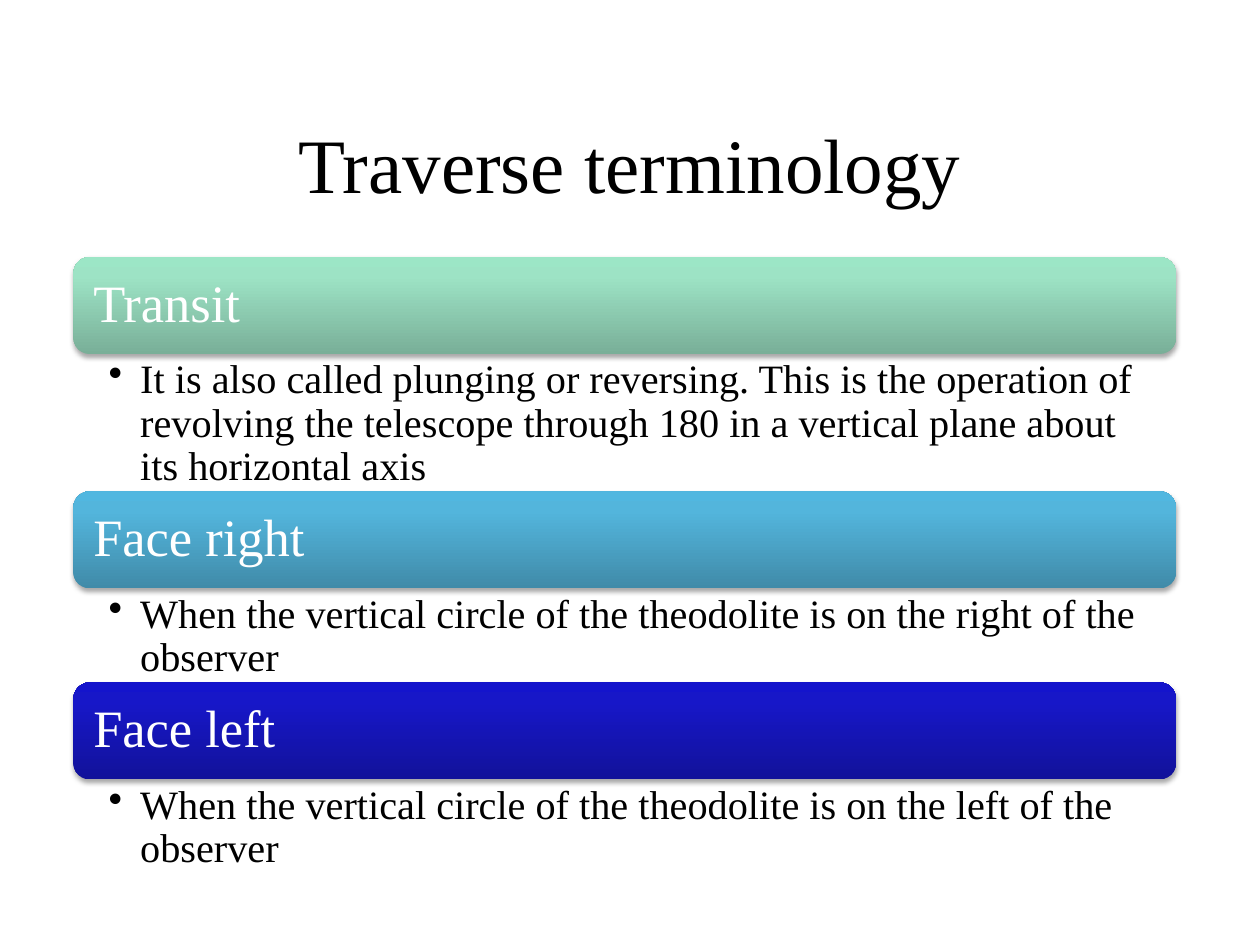
import dataclasses

import pptx
import pptx.dml.color
import pptx.enum.shapes
import pptx.enum.text
import pptx.oxml
import pptx.oxml.ns
import pptx.util

ANCHOR = pptx.enum.text.MSO_ANCHOR
ALIGN = pptx.enum.text.PP_ALIGN


@dataclasses.dataclass(frozen=True)
class Theme:
    """Hold the colours, type sizes and font of the slide."""
    font: str = "Times New Roman"
    title_size: int = 44
    term_size: int = 30
    meaning_size: int = 23
    ink: str = "000000"
    paper: str = "FFFFFF"
    green: tuple = ("79AF98", "9DE3C5", "9CE6C6")
    sky: tuple = ("408BA9", "53B5DC", "51B7E0")
    navy: tuple = ("12129A", "1717C8", "1414CC")


THEME = Theme()
WIDTH, HEIGHT = pptx.util.Inches(10), pptx.util.Inches(7.5)
LEFT, SPAN = 5.83, 87.5
FIRST_ROW, BANNER_ROWS = 27.2, 10.27
TERM_COLUMN_INSET, TERM_ROW_INSET = 0.37, 0.5

TERMS = [
    ("Transit", "It is also called plunging or reversing. This is the operation of revolving "
     "the telescope through 180 in a vertical plane about its horizontal axis", THEME.green, 14.53),
    ("Face right", "When the vertical circle of the theodolite is on the right of the observer",
     THEME.sky, 9.95),
    ("Face left", "When the vertical circle of the theodolite is on the left of the observer",
     THEME.navy, 9.95),
]


def place(column, row, columns, rows):
    """Turn cells of a 100 by 100 grid into left, top, width and height."""
    return (int(WIDTH * column / 100), int(HEIGHT * row / 100),
            int(WIDTH * columns / 100), int(HEIGHT * rows / 100))


def drawing_xml(markup):
    """Parse one DrawingML element that has the prefix a."""
    return pptx.oxml.parse_xml(markup.replace(
        " ", f" {pptx.oxml.ns.nsdecls('a')} ", 1))


def add_bullet(paragraph):
    """Give a paragraph a round bullet with a hanging indent."""
    properties = paragraph._p.get_or_add_pPr()
    indent = pptx.util.Inches(0.25)
    properties.set("marL", str(indent))
    properties.set("indent", str(-indent))
    properties.append(drawing_xml('<a:buChar char="•"/>'))


def add_text(slide, text, cells, *, size, color=THEME.ink, align=ALIGN.LEFT,
             anchor=ANCHOR.TOP, insets=(0.1, 0.05, 0.1, 0.05), spacing=0.9, bullet=False):
    """Add a wrapped text box with one formatted paragraph."""
    frame = slide.shapes.add_textbox(*place(*cells)).text_frame
    frame.word_wrap = True
    frame.vertical_anchor = anchor
    (frame.margin_left, frame.margin_top,
     frame.margin_right, frame.margin_bottom) = map(pptx.util.Inches, insets)
    paragraph = frame.paragraphs[0]
    paragraph.alignment = align
    paragraph.line_spacing = spacing
    if bullet:
        paragraph.level = 1
        add_bullet(paragraph)
    run = paragraph.add_run()
    run.text = text
    run.font.name = THEME.font
    run.font.size = pptx.util.Pt(size)
    run.font.color.rgb = pptx.dml.color.RGBColor.from_string(color)


def add_banner(slide, cells, colors):
    """Add a rounded bar with an upward gradient and a soft shadow."""
    shape = slide.shapes.add_shape(
        pptx.enum.shapes.MSO_SHAPE.ROUNDED_RECTANGLE, *place(*cells))
    shape.line.fill.background()
    shape.shadow.inherit = False
    stops = "".join(f'<a:gs pos="{share * 1000}"><a:srgbClr val="{color}"/></a:gs>'
                    for share, color in zip((0, 80, 100), colors))
    properties = shape.element.spPr
    properties.find(pptx.oxml.ns.qn("a:prstGeom")).addnext(drawing_xml(
        f'<a:gradFill rotWithShape="1"><a:gsLst>{stops}</a:gsLst>'
        '<a:lin ang="16200000" scaled="0"/></a:gradFill>'))
    blur, distance = pptx.util.Pt(3.1), pptx.util.Pt(1.8)
    properties.find(pptx.oxml.ns.qn("a:effectLst")).append(drawing_xml(
        f'<a:outerShdw blurRad="{blur}" dist="{distance}" dir="5400000" rotWithShape="0">'
        f'<a:srgbClr val="{THEME.ink}"><a:alpha val="35000"/></a:srgbClr></a:outerShdw>'))


def add_term(slide, row, term, meaning, colors, meaning_rows):
    """Add a term banner with its meaning below and return the next free row."""
    add_banner(slide, (LEFT, row, SPAN, BANNER_ROWS), colors)
    term_cells = (LEFT + TERM_COLUMN_INSET, row + TERM_ROW_INSET,
                  SPAN - 2 * TERM_COLUMN_INSET, BANNER_ROWS - 2 * TERM_ROW_INSET)
    add_text(slide, term, term_cells, size=THEME.term_size, color=THEME.paper,
             anchor=ANCHOR.MIDDLE, insets=(0.12,) * 4)
    row += BANNER_ROWS
    add_text(slide, meaning, (LEFT, row, SPAN, meaning_rows), size=THEME.meaning_size,
             insets=(0.28, 0.04, 0.23, 0.04), bullet=True)
    return row + meaning_rows


def main():
    """Build and save the slide."""
    presentation = pptx.Presentation()
    presentation.slide_width, presentation.slide_height = WIDTH, HEIGHT
    slide = presentation.slides.add_slide(presentation.slide_layouts[6])
    add_text(slide, "Traverse terminology", (7.5, 8.93, 85, 16.67), size=THEME.title_size,
             align=ALIGN.CENTER, anchor=ANCHOR.MIDDLE, spacing=1.0)
    row = FIRST_ROW
    for term in TERMS:
        row = add_term(slide, row, *term)
    presentation.save("out.pptx")


if __name__ == "__main__":
    main()
